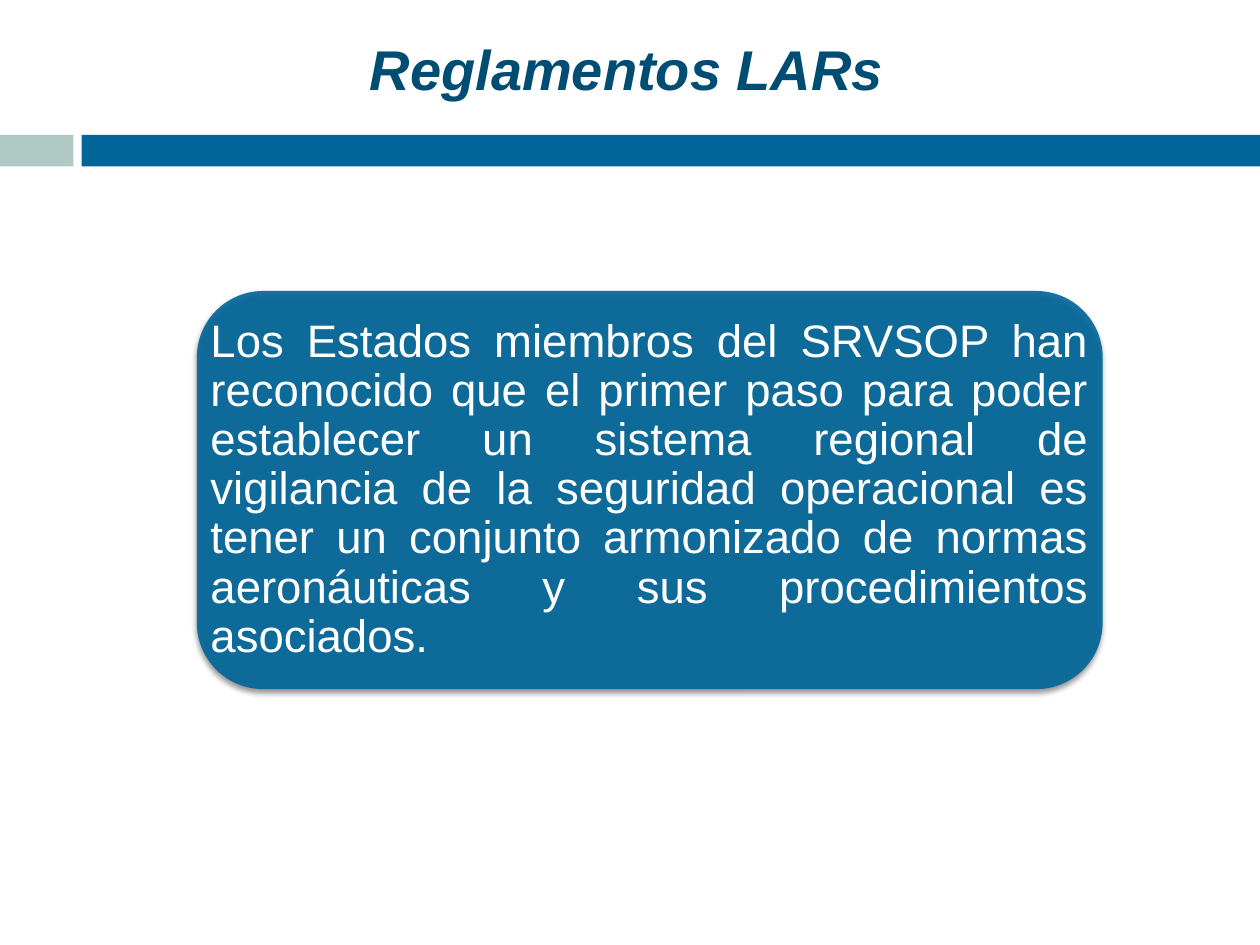
from lxml import etree
from pptx import Presentation
from pptx.dml.color import RGBColor
from pptx.enum.shapes import MSO_SHAPE
from pptx.enum.text import MSO_ANCHOR, MSO_AUTO_SIZE, PP_ALIGN
from pptx.oxml import parse_xml
from pptx.oxml.ns import nsdecls, qn
from pptx.util import Pt

RECT = MSO_SHAPE.RECTANGLE
ROUNDED = MSO_SHAPE.ROUNDED_RECTANGLE
MIDDLE = MSO_ANCHOR.MIDDLE
NO_FIT = MSO_AUTO_SIZE.NONE
CENTER = PP_ALIGN.CENTER
JUSTIFY = PP_ALIGN.JUSTIFY

BLUE = RGBColor(0x00, 0x66, 0x99)
NAVY = RGBColor(0x00, 0x4D, 0x73)
SAGE = RGBColor(0xAF, 0xCA, 0xC4)
WHITE = RGBColor(0xFF, 0xFF, 0xFF)

WIDTH, HEIGHT = 720, 540
BAND_TOP, BAND_HEIGHT = 77.04, 18
BAND_LEFT = 46.6
PANEL = (112.5, 166.3, 517.6, 227.5)

STATEMENT = (
    "Los Estados miembros del SRVSOP han reconocido que el primer paso para "
    "poder establecer un sistema regional de vigilancia de la seguridad "
    "operacional es tener un conjunto armonizado de normas aeronáuticas y sus "
    "procedimientos asociados."
)


class SlideBuilder:
    font = "Arial"

    def __init__(self, slide):
        self.slide = slide

    def format_text(self, sp, text, size, color, align, inset):
        tf = sp.text_frame
        tf.word_wrap = True
        tf.auto_size = NO_FIT
        tf.vertical_anchor = MIDDLE
        tf.margin_left = tf.margin_right = Pt(inset)
        tf.margin_top = tf.margin_bottom = Pt(inset)
        p = tf.paragraphs[0]
        p.text = text
        p.alignment = align
        p.font.name = self.font
        p.font.size = Pt(size)
        p.font.color.rgb = color
        return p

    def title(self, text, left, top, width, height):
        sp = self.slide.shapes.title
        sp.left, sp.top = Pt(left), Pt(top)
        sp.width, sp.height = Pt(width), Pt(height)
        p = self.format_text(sp, text, 32, NAVY, CENTER, 4)
        p.font.bold = True
        p.font.italic = True

    def shape(self, kind, left, top, width, height, fill):
        sp = self.slide.shapes.add_shape(kind, Pt(left), Pt(top), Pt(width), Pt(height))
        sp.shadow.inherit = False
        sp.fill.solid()
        sp.fill.fore_color.rgb = fill
        sp.line.fill.background()
        return sp

    def panel(self, left, top, width, height, fill, opacity):
        sp = self.shape(ROUNDED, left, top, width, height, fill)
        spPr = sp._element.spPr
        color = spPr.find(qn("a:solidFill")).find(qn("a:srgbClr"))
        etree.SubElement(color, qn("a:alpha"), val=str(opacity * 1000))
        spPr.find(qn("a:effectLst")).append(parse_xml(
            f'<a:outerShdw {nsdecls("a")} blurRad="{Pt(3)}" dist="{Pt(2.4)}" '
            'dir="5400000" rotWithShape="0"><a:srgbClr val="000000">'
            '<a:alpha val="45000"/></a:srgbClr></a:outerShdw>'))

    def text(self, text, left, top, width, height):
        sp = self.slide.shapes.add_textbox(Pt(left), Pt(top), Pt(width), Pt(height))
        p = self.format_text(sp, text, 26, WHITE, JUSTIFY, 7.8)
        p.line_spacing = 0.9


def main():
    prs = Presentation()
    prs.slide_width, prs.slide_height = Pt(WIDTH), Pt(HEIGHT)
    s = SlideBuilder(prs.slides.add_slide(prs.slide_layouts[5]))
    s.shape(RECT, 0, BAND_TOP, 42, BAND_HEIGHT, SAGE)
    s.shape(RECT, BAND_LEFT, BAND_TOP, WIDTH - BAND_LEFT, BAND_HEIGHT, BLUE)
    s.title("Reglamentos LARs", 19.4, 15.1, 677.5, 47.5)
    s.panel(*PANEL, BLUE, 90)
    s.text(STATEMENT, *PANEL)
    prs.save("out.pptx")


if __name__ == "__main__":
    main()
